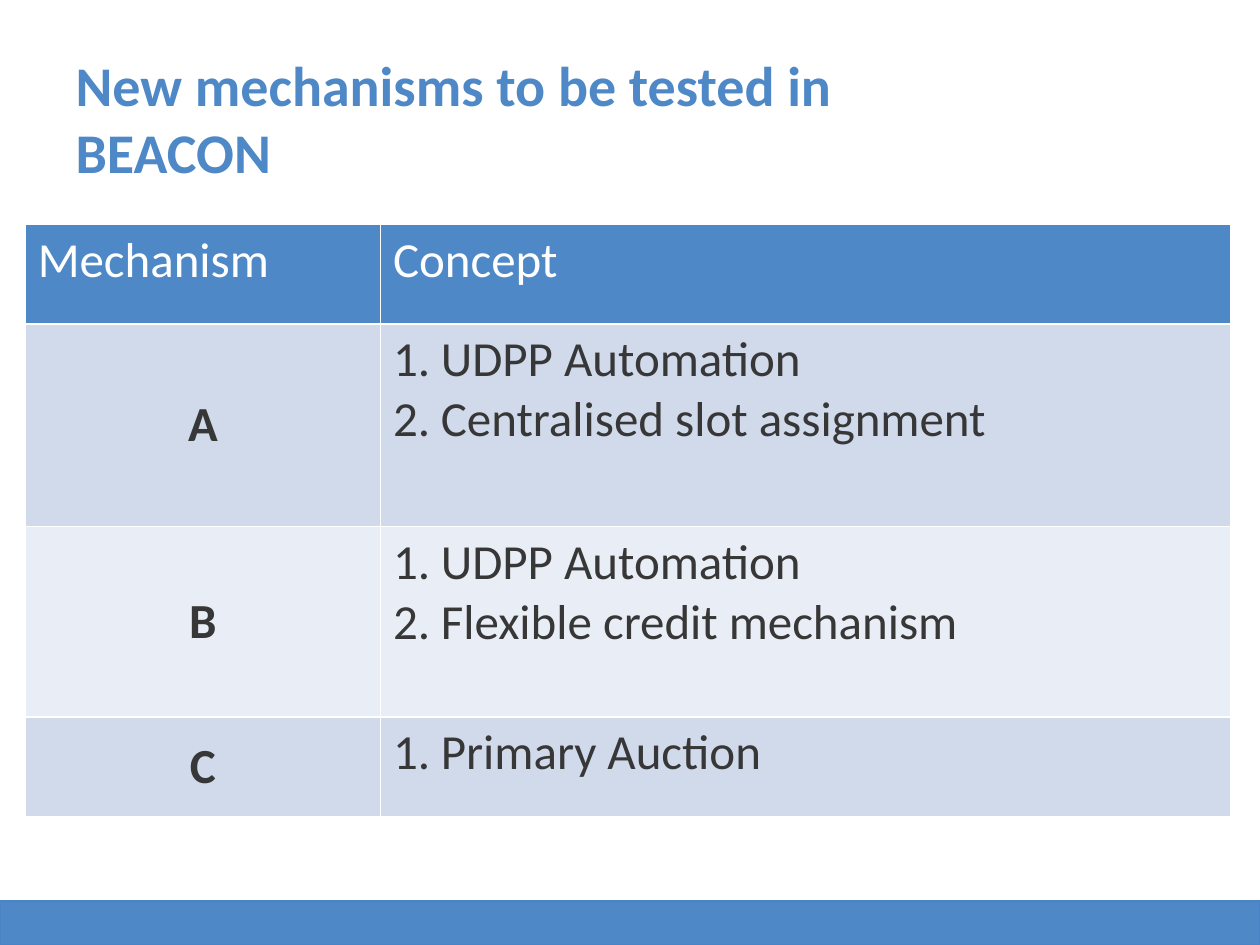
from dataclasses import dataclass

from lxml import etree
from pptx import Presentation
from pptx import util as u
from pptx.dml.color import RGBColor
from pptx.enum import shapes, text
from pptx.oxml.ns import qn


@dataclass(frozen=True)
class Theme:
    font: str = "Calibri"
    blue: str = "4E88C7"
    band_line: str = "4985C6"
    white: str = "FFFFFF"
    ink: str = "373737"
    row_fills: tuple = ("D0DAEB", "E9EDF5")
    title_size: int = 32
    table_size: int = 28


THEME = Theme()
TITLE = "New mechanisms to be tested in BEACON"
HEADINGS = ("Mechanism", "Concept")
MECHANISMS = (
    ("A", ("UDPP Automation", "Centralised slot assignment")),
    ("B", ("UDPP Automation", "Flexible credit mechanism")),
    ("C", ("Primary Auction",)),
)
COLUMN_WIDTHS = (2.82, 6.75)
ROW_HEIGHTS = (0.79, 1.61, 1.51, 0.79)


def place(shape, box):
    shape.left, shape.top, shape.width, shape.height = map(u.Inches, box)


def write(paragraph, words, size=THEME.table_size, color=THEME.ink, bold=False,
          align=text.PP_ALIGN.LEFT):
    paragraph.alignment = align
    run = paragraph.add_run()
    run.text = words
    font = run.font
    font.name, font.size, font.bold = THEME.font, u.Pt(size), bold
    font.color.rgb = RGBColor.from_string(color)


def number(paragraph):
    """Give the paragraph an automatic number and a hanging indent."""
    properties = paragraph._p.get_or_add_pPr()
    indent = u.Inches(0.38)
    properties.set("marL", str(indent))
    properties.set("indent", str(-indent))
    etree.SubElement(properties, qn("a:buFont"), typeface="+mj-lt")
    etree.SubElement(properties, qn("a:buAutoNum"), type="arabicPeriod")


def style_cell(cell, fill):
    """Fill the cell and draw a thin white border on every side."""
    cell.fill.solid()
    cell.fill.fore_color.rgb = RGBColor.from_string(fill)
    properties = cell._tc.get_or_add_tcPr()
    for position, side in enumerate(("lnL", "lnR", "lnT", "lnB")):
        line = etree.Element(qn("a:" + side), w=str(u.Pt(1)))
        solid = etree.SubElement(line, qn("a:solidFill"))
        etree.SubElement(solid, qn("a:srgbClr"), val=THEME.white)
        properties.insert(position, line)


def add_footer_band(slide, box):
    band = slide.shapes.add_shape(shapes.MSO_SHAPE.RECTANGLE, *map(u.Inches, box))
    band.shadow.inherit = False
    band.fill.solid()
    band.fill.fore_color.rgb = RGBColor.from_string(THEME.blue)
    band.line.color.rgb = RGBColor.from_string(THEME.band_line)
    band.line.width = u.Pt(0.75)


def fill_title(slide, box):
    title = slide.shapes.title
    place(title, box)
    frame = title.text_frame
    frame.word_wrap = True
    frame.auto_size = text.MSO_AUTO_SIZE.NONE
    frame.vertical_anchor = text.MSO_ANCHOR.MIDDLE
    write(frame.paragraphs[0], TITLE, size=THEME.title_size, color=THEME.blue, bold=True)


def add_mechanism_table(slide, box):
    table = slide.shapes.add_table(
        len(ROW_HEIGHTS), len(COLUMN_WIDTHS), *map(u.Inches, box)).table
    for column, width in zip(table.columns, COLUMN_WIDTHS):
        column.width = u.Inches(width)
    for row, height in zip(table.rows, ROW_HEIGHTS):
        row.height = u.Inches(height)

    for cell, heading in zip(table.rows[0].cells, HEADINGS):
        style_cell(cell, THEME.blue)
        write(cell.text_frame.paragraphs[0], heading, color=THEME.white)

    for index, (name, concepts) in enumerate(MECHANISMS):
        name_cell, concept_cell = table.rows[index + 1].cells
        for cell in (name_cell, concept_cell):
            style_cell(cell, THEME.row_fills[index % 2])
        name_cell.vertical_anchor = text.MSO_ANCHOR.MIDDLE
        write(name_cell.text_frame.paragraphs[0], name, bold=True,
              align=text.PP_ALIGN.CENTER)
        frame = concept_cell.text_frame
        for order, concept in enumerate(concepts):
            paragraph = frame.add_paragraph() if order else frame.paragraphs[0]
            number(paragraph)
            write(paragraph, concept)


def main():
    presentation = Presentation()
    presentation.slide_width, presentation.slide_height = u.Inches(10), u.Inches(7.5)
    slide = presentation.slides.add_slide(presentation.slide_layouts.get_by_name("Title Only"))
    add_footer_band(slide, (0, 7.15, 10, 0.35))
    fill_title(slide, (0.5, 0.31, 6.9, 1.25))
    add_mechanism_table(slide, (0.2, 1.78, sum(COLUMN_WIDTHS), sum(ROW_HEIGHTS)))
    presentation.save("out.pptx")


if __name__ == "__main__":
    main()
